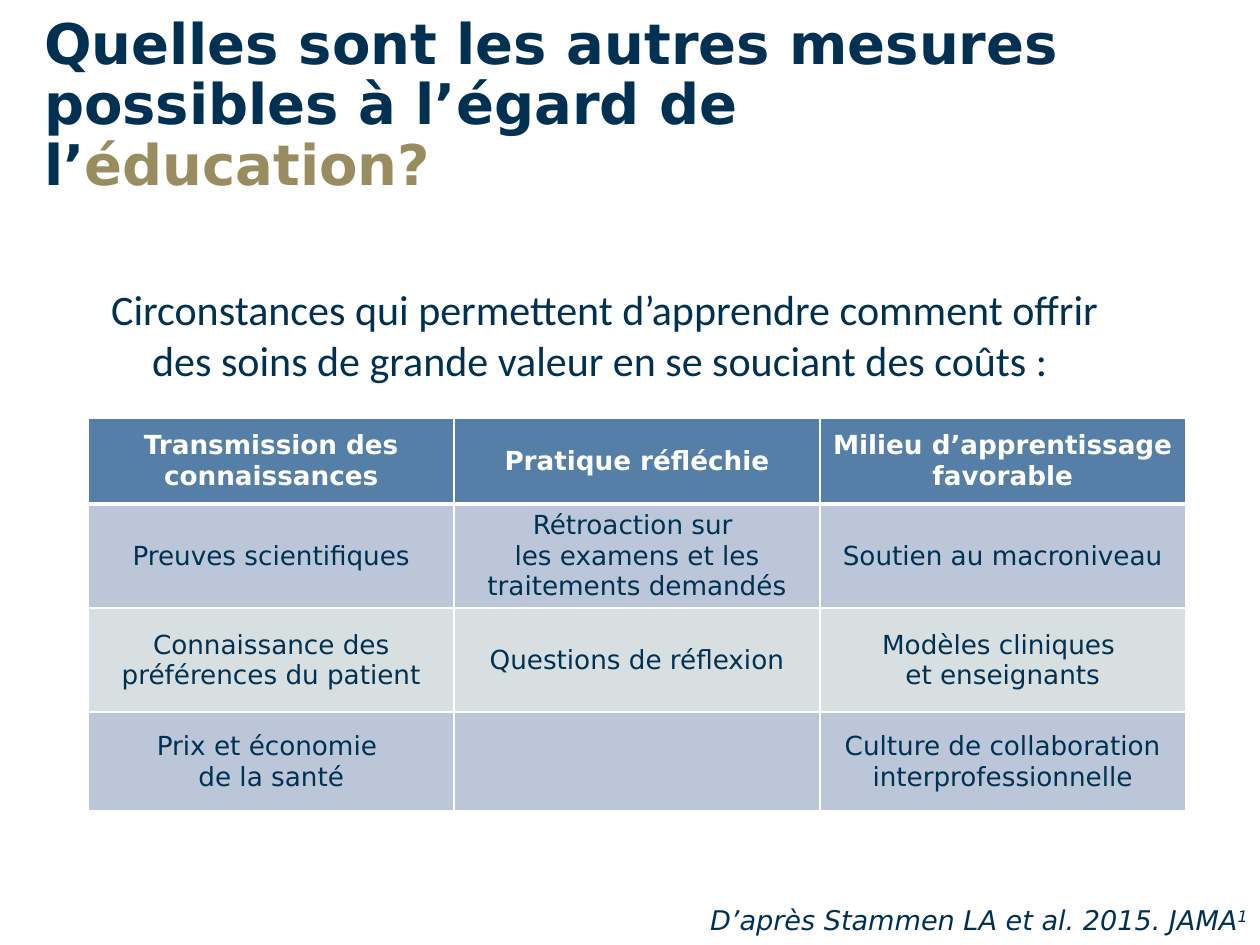
from lxml import etree
from pptx import Presentation
from pptx.dml.color import RGBColor
from pptx.enum.text import MSO_ANCHOR, MSO_AUTO_SIZE, PP_ALIGN
from pptx.oxml.ns import qn
from pptx.util import Pt

LEFT, CENTER, RIGHT = PP_ALIGN.LEFT, PP_ALIGN.CENTER, PP_ALIGN.RIGHT
MIDDLE, BOTTOM = MSO_ANCHOR.MIDDLE, MSO_ANCHOR.BOTTOM
NO_AUTOFIT = MSO_AUTO_SIZE.NONE
TITLE_ONLY = 5

SANS, BODY = "DejaVu Sans", "Calibri"
NAVY, GOLD, WHITE = "003152", "998D5F", "FFFFFF"
HEADER_FILL = "557FA6"
BAND_FILLS = ["BBC7D9", "D8DFE0"]

ROW_HEIGHTS = [49, 59.5, 59.5, 56.5]
ROWS = [
    ["Transmission des connaissances", "Pratique réfléchie",
     "Milieu d’apprentissage favorable"],
    ["Preuves scientifiques",
     "Rétroaction sur \nles examens et les traitements demandés",
     "Soutien au macroniveau"],
    ["Connaissance des préférences du patient", "Questions de réflexion",
     "Modèles cliniques \net enseignants"],
    ["Prix et économie \nde la santé", "",
     "Culture de collaboration interprofessionnelle"],
]


def color(value):
    return RGBColor.from_string(value)


def add_run(paragraph, text, size, font=SANS, fill=NAVY, bold=False, italic=False):
    run = paragraph.add_run()
    run.text = text
    run.font.name = font
    run.font.size = Pt(size)
    run.font.bold = bold
    run.font.italic = italic
    run.font.color.rgb = color(fill)
    return run


def place(shape, box):
    shape.left, shape.top, shape.width, shape.height = [Pt(value) for value in box]


def add_title(slide, box):
    title = slide.shapes.title
    place(title, box)
    frame = title.text_frame
    frame.auto_size = NO_AUTOFIT
    frame.word_wrap = True
    frame.vertical_anchor = BOTTOM
    paragraph = frame.paragraphs[0]
    paragraph.alignment = LEFT
    paragraph.line_spacing = 0.9
    add_run(paragraph, "Quelles sont les autres mesures possibles à l’égard de l’",
            32, bold=True)
    add_run(paragraph, "éducation?", 32, fill=GOLD, bold=True)


def add_text_box(slide, box, alignment):
    text_box = slide.shapes.add_textbox(*[Pt(value) for value in box])
    text_box.text_frame.word_wrap = True
    paragraph = text_box.text_frame.paragraphs[0]
    paragraph.alignment = alignment
    return paragraph


def add_introduction(slide, box):
    paragraph = add_text_box(slide, box, CENTER)
    add_run(paragraph, "Circonstances qui permettent d’apprendre comment offrir "
            "des soins de grande valeur en se souciant des coûts : ", 24, BODY)


def add_source(slide, box):
    paragraph = add_text_box(slide, box, RIGHT)
    add_run(paragraph, "D’après Stammen LA et al. 2015. JAMA", 15.5, italic=True)
    reference = add_run(paragraph, "1", 15.5, italic=True)
    reference.font._element.set("baseline", "30000")


def set_borders(cell, widths):
    # Border lines come before the fill in the cell properties
    properties = cell._tc.get_or_add_tcPr()
    for position, (side, width) in enumerate(widths.items()):
        line = etree.Element(qn(f"a:ln{side}"), w=str(Pt(width)))
        fill = etree.SubElement(line, qn("a:solidFill"))
        etree.SubElement(fill, qn("a:srgbClr"), val=WHITE)
        properties.insert(position, line)


def fill_cell(cell, text, row):
    header = row == 0
    cell.fill.solid()
    cell.fill.fore_color.rgb = color(
        HEADER_FILL if header else BAND_FILLS[(row - 1) % 2])
    cell.margin_left = cell.margin_right = cell.margin_top = cell.margin_bottom = 0
    cell.vertical_anchor = MIDDLE
    set_borders(cell, {"L": 1, "R": 1, "T": 3 if row == 1 else 1,
                       "B": 3 if header else 1})
    paragraph = cell.text_frame.paragraphs[0]
    paragraph.alignment = CENTER
    if not text:
        return
    for index, line in enumerate(text.split("\n")):
        if index:
            paragraph.add_line_break()
        add_run(paragraph, line, 15, fill=WHITE if header else NAVY, bold=header)


def add_conditions_table(slide, box):
    frame = slide.shapes.add_table(len(ROWS), len(ROWS[0]),
                                   *[Pt(value) for value in box])
    table = frame.table
    for column in table.columns:
        column.width = Pt(box[2] / len(ROWS[0]))
    for row, texts in enumerate(ROWS):
        table.rows[row].height = Pt(ROW_HEIGHTS[row])
        for column, text in enumerate(texts):
            fill_cell(table.cell(row, column), text, row)


def main():
    presentation = Presentation()
    presentation.slide_width, presentation.slide_height = Pt(720), Pt(540)
    slide = presentation.slides.add_slide(presentation.slide_layouts[TITLE_ONLY])
    add_title(slide, (18, 15, 637, 101.5))
    add_conditions_table(slide, (50.5, 239, 627, sum(ROW_HEIGHTS)))
    add_source(slide, (206.5, 512.5, 513.5, 26))
    add_introduction(slide, (45.5, 158.5, 600, 65.5))
    presentation.save("out.pptx")


if __name__ == "__main__":
    main()
